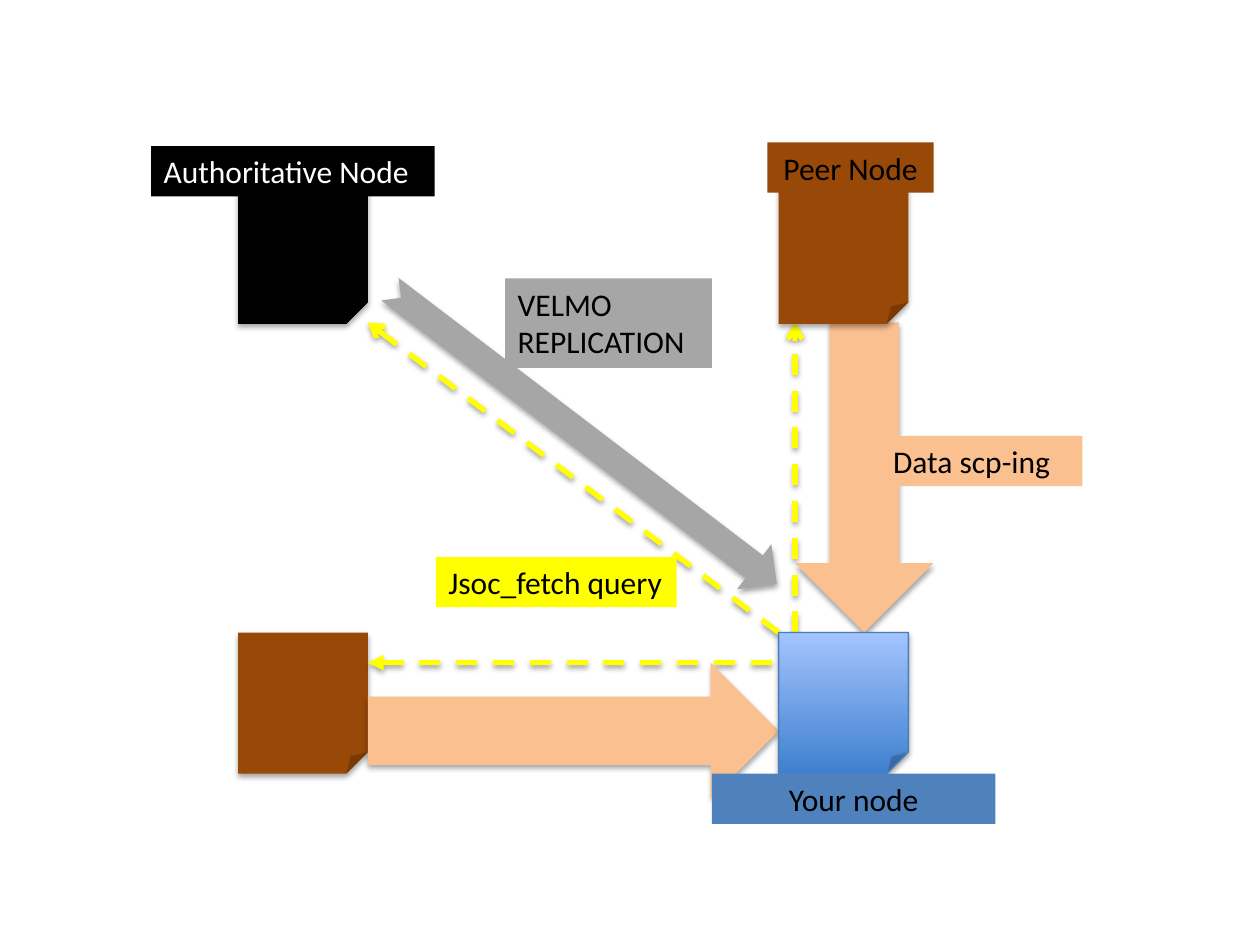
from lxml import etree
from pptx import Presentation
from pptx import util as u
from pptx.dml.color import RGBColor
from pptx.enum import dml, shapes, text
from pptx.oxml import ns

SCALE = 9144  # EMU per px, 100 px to the inch
KIND = shapes.MSO_SHAPE
BROWN, PEACH, GREY, YELLOW = "984807", "FAC090", "A6A6A6", "FFFF00"
BLACK, WHITE, BLUE = "000000", "FFFFFF", "4F81BD"

# Columns and rows that the nodes share
LEFT, RIGHT = 189, 618
TOP, LOW = 145, 502
NODE_W, NODE_H = 103, 112


def px(*vals):
    return [u.Emu(v * SCALE) for v in vals]


def rgb(code):
    return RGBColor.from_string(code)


def apply(obj, vals):
    for name, val in vals.items():
        setattr(obj, name, val)


def add_xml(parent, tag, **attrs):
    return etree.SubElement(parent, ns.qn(tag), attrs)


def shade(item, dist=23000, alpha=35000):
    """Soft shadow that falls straight down."""
    props = item.element.spPr
    for old in props.findall(ns.qn("a:effectLst")):
        props.remove(old)
    glow = add_xml(add_xml(props, "a:effectLst"), "a:outerShdw",
                   blurRad="40000", dist=str(dist), dir="5400000",
                   rotWithShape="0")
    tint = add_xml(glow, "a:srgbClr", val=BLACK)
    add_xml(tint, "a:alpha", val=str(alpha))


def add_form(slide, kind, box, fill, turn=0):
    form = slide.shapes.add_shape(kind, *px(*box))
    form.rotation = turn
    form.fill.solid()
    form.fill.fore_color.rgb = rgb(fill)
    form.line.fill.background()
    shade(form)
    return form


def add_node(slide, left, top, fill):
    return add_form(slide, KIND.FOLDED_CORNER,
                    (left, top, NODE_W, NODE_H), fill)


def add_label(slide, words, box, fill, ink=BLACK, mid=False):
    label = slide.shapes.add_textbox(*px(*box))
    label.fill.solid()
    label.fill.fore_color.rgb = rgb(fill)
    frame = label.text_frame
    apply(frame, {"word_wrap": True,
                  "auto_size": text.MSO_AUTO_SIZE.SHAPE_TO_FIT_TEXT})
    para = frame.paragraphs[0]
    if mid:
        para.alignment = text.PP_ALIGN.CENTER
    run = para.add_run()
    run.text = words
    apply(run.font, {"name": "Calibri", "size": u.Pt(18)})
    run.font.color.rgb = rgb(ink)


def add_query(slide, start, end, tip="a:tailEnd", form="arrow"):
    """Dashed line with an arrowhead at one end."""
    line = slide.shapes.add_connector(
        shapes.MSO_CONNECTOR.STRAIGHT, *px(*start, *end))
    apply(line.line, {"width": u.Pt(3),
                      "dash_style": dml.MSO_LINE.DASH})
    line.line.color.rgb = rgb(YELLOW)
    add_xml(line.element.spPr.find(ns.qn("a:ln")), tip, type=form)
    shade(line, 20000, 38000)


def blend(node):
    """Light at the top, dark at the foot, with a thin edge."""
    node.fill.gradient()
    node.fill.gradient_angle = 90
    for stop, code in zip(node.fill.gradient_stops, ("3F80CE", "A4C4FF")):
        stop.color.rgb = rgb(code)
    node.line.color.rgb = rgb("4B7EBC")
    node.line.width = u.Pt(0.75)


def main():
    deck = Presentation()
    deck.slide_width, deck.slide_height = px(1000, 750)
    slide = deck.slides.add_slide(deck.slide_layouts[6])

    # Second peer, without a label
    add_node(slide, LEFT, LOW, BROWN)

    # Replication
    add_form(slide, KIND.NOTCHED_RIGHT_ARROW, (270, 324, 386, 45), GREY, 37.3)
    add_label(slide, "VELMO REPLICATION", (401, 221, 164, 71), GREY)

    # Queries from your node
    edge = LEFT + NODE_W
    add_query(slide, (631, LOW), (631, 256))
    add_query(slide, (RIGHT, LOW), (edge, 256))
    add_query(slide, (edge, 526), (RIGHT, 526), "a:headEnd", "triangle")
    add_label(slide, "Jsoc_fetch query", (346, 442, 191, 40), YELLOW)

    # Data transfer to your node
    add_form(slide, KIND.RIGHT_ARROW, (edge, 526, RIGHT - edge, 108), PEACH)
    add_form(slide, KIND.DOWN_ARROW, (631, 256, 110, 246), PEACH)
    add_label(slide, "Data scp-ing", (699, 346, 160, 40), PEACH)

    # Named nodes
    add_node(slide, LEFT, TOP, BLACK)
    add_label(slide, "Authoritative Node", (120, 116, 225, 40), BLACK, WHITE)
    add_node(slide, RIGHT, TOP, BROWN)
    add_label(slide, "Peer Node", (609, 113, 132, 40), BROWN, mid=True)
    blend(add_node(slide, RIGHT, LOW, BLUE))
    add_label(slide, "Your node", (565, 614, 225, 40), BLUE, mid=True)

    deck.save("out.pptx")


if __name__ == "__main__":
    main()
